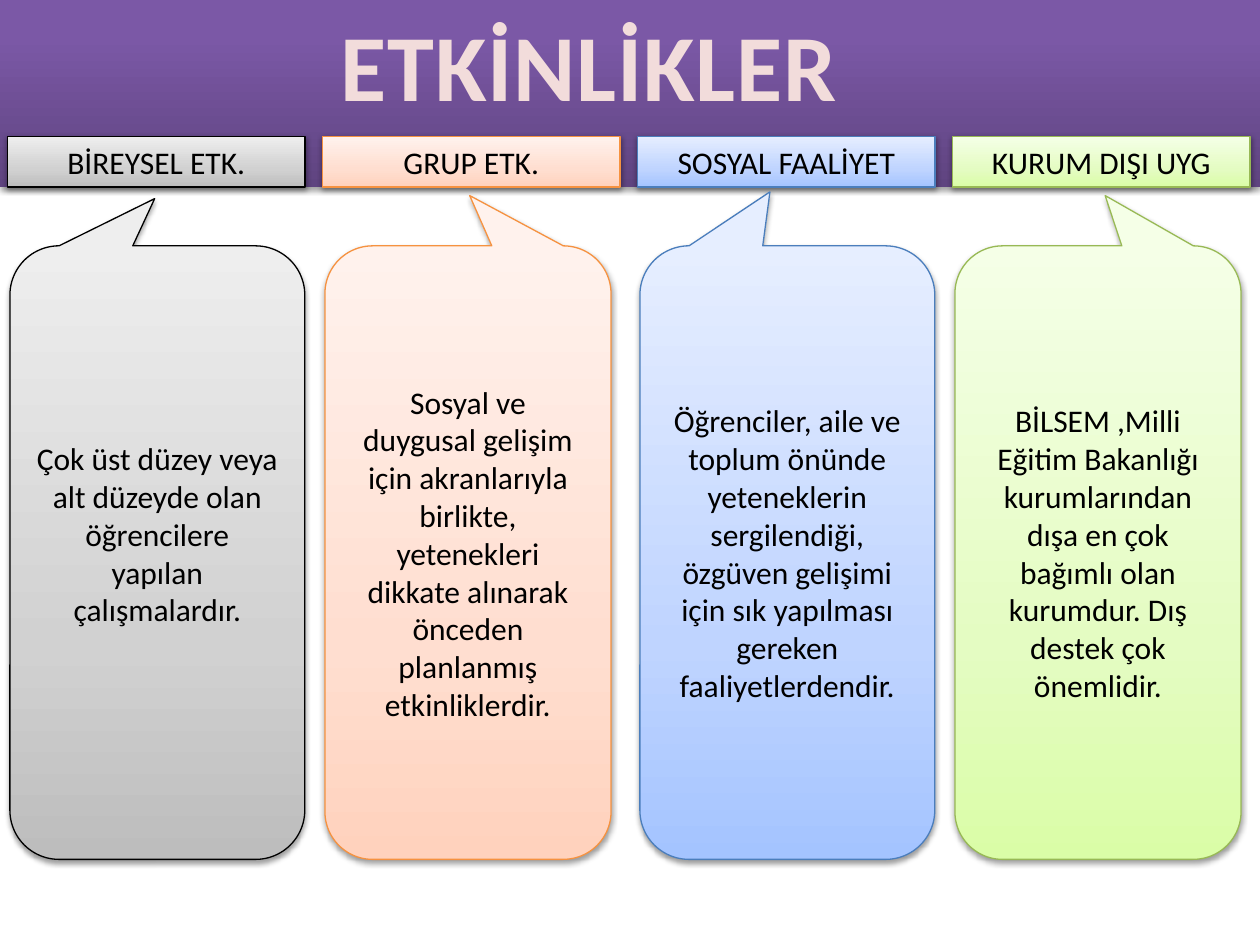
from copy import deepcopy
from lxml import etree
from pptx import Presentation
from pptx.dml import color
from pptx.enum import shapes, text
from pptx.oxml import ns
from pptx.util import Pt

GREY = ["BDBDBD", "D1D1D1", "EEEEEE"]
PEACH = ["FFD2BD", "FFDED0", "FFF2ED"]
BLUE = ["A4C4FF", "BFD4FF", "E6EEFF"]
GREEN = ["DAFDA7", "E4FCC2", "F5FFE7"]

COLS = [
    ("BİREYSEL ETK.", GREY, "000000", 168.5, (-0.009, -0.577), 25.2,
     "Çok üst düzey veya alt düzeyde olan öğrencilere yapılan çalışmalardır."),
    ("GRUP ETK.", PEACH, "F69240", 163.5, (0.006, -0.582), 3.6,
     "Sosyal ve duygusal gelişim için akranlarıyla birlikte, yetenekleri "
     "dikkate alınarak önceden planlanmış etkinliklerdir."),
    ("SOSYAL FAALİYET", BLUE, "4B7EBC", 168.5, (-0.059, -0.588), 3.6,
     "Öğrenciler, aile ve toplum önünde yeteneklerin sergilendiği, özgüven "
     "gelişimi için sık yapılması gereken faaliyetlerdendir."),
    ("KURUM DIŞI UYG", GREEN, "98B955", 163.5, (0.025, -0.582), 3.6,
     "BİLSEM ,Milli Eğitim Bakanlığı kurumlarından dışa en çok bağımlı olan "
     "kurumdur. Dış destek çok önemlidir."),
]


def rgb(code):
    return color.RGBColor.from_string(code)


def blend(shape, hues, mid):
    shape.fill.gradient()
    shape.fill.gradient_angle = 90
    first = shape._element.spPr.find(".//" + ns.qn("a:gs"))
    first.addnext(deepcopy(first))
    for stop, hue, spot in zip(shape.fill.gradient_stops, hues, (0, mid, 1)):
        stop.color.rgb = rgb(hue)
        stop.position = spot


def shade(shape, dist, alpha):
    shape.shadow.inherit = False
    effects = shape._element.spPr.find(ns.qn("a:effectLst"))
    outer = etree.SubElement(
        effects, ns.qn("a:outerShdw"), blurRad=str(Pt(3.1)),
        dist=str(Pt(dist)), dir="5400000", rotWithShape="0")
    tint = etree.SubElement(outer, ns.qn("a:srgbClr"), val="000000")
    etree.SubElement(tint, ns.qn("a:alpha"), val=str(alpha * 1000))


def write(shape, words, size=18, hue="000000", bold=False, wrap=True,
          base=3.6, space=0):
    frame = shape.text_frame
    frame.word_wrap = wrap
    frame.auto_size = text.MSO_AUTO_SIZE.NONE
    frame.vertical_anchor = text.MSO_ANCHOR.MIDDLE
    frame.margin_bottom = Pt(base)
    para = frame.paragraphs[0]
    para.alignment = text.PP_ALIGN.CENTER
    run = para.add_run()
    run.text = words
    font = run.font
    font.name, font.size, font.bold = "Calibri", Pt(size), bold
    font.color.rgb = rgb(hue)
    if space:
        font._element.set("spc", str(int(space * 100)))


def panel(slide, kind, box, hues, edge=None, mid=0.35, dist=1.6, alpha=38):
    shape = slide.shapes.add_shape(kind, *map(Pt, box))
    blend(shape, hues, mid)
    shade(shape, dist, alpha)
    if edge:
        shape.line.color.rgb = rgb(edge)
        shape.line.width = Pt(0.75)
    else:
        shape.line.fill.background()
    return shape


def head(slide, words):
    title = slide.shapes.title
    title.left, title.top, title.width, title.height = map(
        Pt, (186, 0, 301.5, 72.7))
    write(title, words, size=54, hue="F2DCDB", bold=True, wrap=False,
          space=0.5)
    slide.shapes._spTree.append(title._element)


def main():
    deck = Presentation()
    deck.slide_width, deck.slide_height = Pt(720), Pt(540)
    slide = deck.slides.add_slide(deck.slide_layouts[5])
    kinds = shapes.MSO_SHAPE
    panel(slide, kinds.RECTANGLE, (0, 0, 720, 106.6),
          ["5F4480", "7B58A6", "7C57A8"], mid=0.8, dist=1.8, alpha=35)
    head(slide, "ETKİNLİKLER")
    for i, (name, hues, edge, width, tip, base, words) in enumerate(COLS):
        left = 4.3 + 180 * i
        label = panel(slide, kinds.RECTANGLE, (left, 77.8, 170, 29.1),
                      hues, edge)
        write(label, name)
        bubble = panel(slide, kinds.ROUNDED_RECTANGULAR_CALLOUT,
                       (left + 1.4, 140.5, width, 350.6), hues, edge)
        bubble.adjustments[0], bubble.adjustments[1] = tip
        write(bubble, words, base=base)
    deck.save("out.pptx")


if __name__ == "__main__":
    main()
